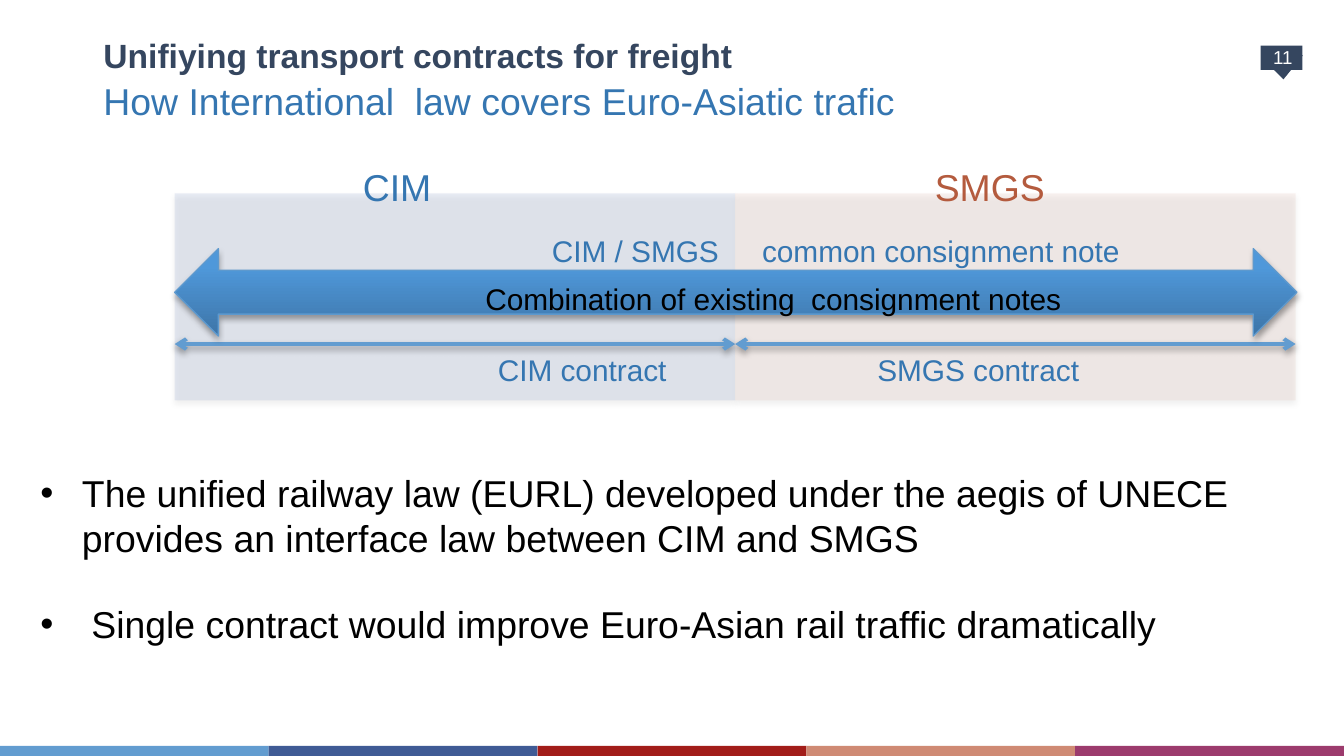
"""Builds the slide on unifying rail freight contracts between CIM and SMGS."""
from lxml import etree
from pptx import Presentation
from pptx import util as u
from pptx.dml.color import RGBColor
from pptx.enum import shapes, text
from pptx.oxml import parse_xml
from pptx.oxml.ns import nsdecls, qn

PX = 9144
NAVY = RGBColor(0x35, 0x46, 0x5F)
BLUE = RGBColor(0x35, 0x76, 0xB1)
SKY = RGBColor(0x62, 0x9C, 0xD0)
INDIGO = RGBColor(0x3F, 0x5B, 0x95)
RED = RGBColor(0xA2, 0x1D, 0x19)
CLAY = RGBColor(0xCF, 0x8A, 0x74)
PLUM = RGBColor(0x9C, 0x3B, 0x6D)
RUST = RGBColor(0xB4, 0x5B, 0x3E)
CIM_TINT = RGBColor(0x81, 0x99, 0xCA)
SMGS_TINT = RGBColor(0xE2, 0xB9, 0xAC)
ARROW_DARK = RGBColor(0x3D, 0x75, 0xA8)
ARROW_LIGHT = RGBColor(0x4F, 0x98, 0xDA)
ARROW_EDGE = RGBColor(0x5D, 0x99, 0xCE)
WHITE = RGBColor(0xFF, 0xFF, 0xFF)
BLACK = RGBColor(0, 0, 0)

LEFT, CENTER, RIGHT = text.PP_ALIGN.LEFT, text.PP_ALIGN.CENTER, text.PP_ALIGN.RIGHT
SHAPE = shapes.MSO_SHAPE

prs = Presentation()
prs.slide_width = 1000 * PX
prs.slide_height = prs.slide_width * 9 // 16
s = prs.slides.add_slide(prs.slide_layouts[3])


def add_box(kind, x, y, w, h, color):
    sp = s.shapes.add_shape(kind, x * PX, y * PX, w * PX, h * PX)
    sp.shadow.inherit = False
    sp.fill.solid()
    sp.fill.fore_color.rgb = color
    sp.line.fill.background()
    return sp


def write(p, words, size, color, align=LEFT, bold=False):
    p.alignment = align
    p.space_before = u.Pt(0)
    r = p.add_run()
    r.text = words
    r.font.name, r.font.size, r.font.bold = "Arial", u.Pt(size), bold
    r.font.color.rgb = color


add_box(SHAPE.RECTANGLE, 938, 34, 31, 18, NAVY)
add_box(SHAPE.ISOSCELES_TRIANGLE, 939, 42, 31, 17, NAVY).rotation = 176.8
for i, color in enumerate([SKY, INDIGO, RED, CLAY, PLUM]):
    add_box(SHAPE.RECTANGLE, i * 200, 555, 200, 8, color)

title, subtitle, points = s.placeholders
for sp, (x, y, w, h) in [
    (title, (67, 29, 866, 24)),
    (subtitle, (67, 53, 866, 32)),
    (points, (20, 345, 980, 141)),
]:
    sp.left, sp.top, sp.width, sp.height = x * PX, y * PX, w * PX, h * PX
    sp.text_frame.auto_size = text.MSO_AUTO_SIZE.NONE

title.text_frame.vertical_anchor = text.MSO_ANCHOR.MIDDLE
write(title.text_frame.paragraphs[0], "Unifiying transport contracts for freight", 18, NAVY, bold=True)

p = subtitle.text_frame.paragraphs[0]
write(p, "How International  law covers Euro-Asiatic trafic", 20, BLUE)
pPr = p._p.get_or_add_pPr()
pPr.set("marL", "0")
pPr.set("indent", "0")
etree.SubElement(pPr, qn("a:buNone"))

tf = points.text_frame
tf.add_paragraph()
for p, indent, words in zip(tf.paragraphs, [31, 38], [
    "The unified railway law (EURL) developed under the aegis of UNECE "
    "provides an interface law between CIM and SMGS",
    "Single contract would improve Euro-Asian rail traffic dramatically",
]):
    write(p, words, 20, BLACK)
    pPr = p._p.get_or_add_pPr()
    pPr.set("marL", str(indent * PX))
    pPr.set("indent", str(-indent * PX))
tf.paragraphs[1].space_before = u.Pt(22)

shadowed = []
for x, color in [(130, CIM_TINT), (547, SMGS_TINT)]:
    zone = add_box(SHAPE.RECTANGLE, x, 144, 417, 154, color)
    rgb = zone._element.spPr.find(".//" + qn("a:srgbClr"))
    etree.SubElement(rgb, qn("a:alpha"), val="17000")
    shadowed.append(zone)

for x in (130, 547):
    span = s.shapes.add_connector(
        shapes.MSO_CONNECTOR.STRAIGHT, x * PX, 256 * PX, (x + 417) * PX, 256 * PX)
    span.line.color.rgb = SKY
    span.line.width = u.Pt(2)
    ln = span.line._get_or_add_ln()
    for end in ("a:headEnd", "a:tailEnd"):
        etree.SubElement(ln, qn(end), type="arrow")
    shadowed.append(span)

arrow = add_box(SHAPE.LEFT_RIGHT_ARROW, 130, 185, 835, 65, ARROW_LIGHT)
arrow.fill.gradient()
arrow.fill.gradient_angle = 90
for stop, color in zip(arrow.fill.gradient_stops, [ARROW_DARK, ARROW_LIGHT]):
    stop.color.rgb = color
arrow.fill.gradient_stops[1].position = 0.8
arrow.line.color.rgb = ARROW_EDGE
arrow.line.width = u.Pt(0.75)
shadowed.append(arrow)

for sp in shadowed:
    spPr = sp._element.spPr
    for old in spPr.findall(qn("a:effectLst")):
        spPr.remove(old)
    spPr.append(parse_xml(
        f'<a:effectLst {nsdecls("a")}>'
        '<a:outerShdw blurRad="40000" dist="22860" dir="5400000" rotWithShape="0">'
        '<a:srgbClr val="000000"><a:alpha val="35000"/></a:srgbClr>'
        '</a:outerShdw></a:effectLst>'))

for x, y, w, h, words, size, color, align in [
    (201, 116, 189, 32, "CIM", 20, BLUE, CENTER),
    (642, 116, 189, 32, "SMGS", 20, RUST, CENTER),
    (358, 167, 189, 32, "CIM / SMGS", 16, BLUE, RIGHT),
    (555, 167, 299, 32, "common consignment note", 16, BLUE, LEFT),
    (319, 256, 189, 31, "CIM contract", 16, BLUE, RIGHT),
    (626, 256, 189, 31, "SMGS contract", 16, BLUE, RIGHT),
    (280, 203, 591, 31, "Combination of existing  consignment notes", 16, BLACK, CENTER),
    (940, 34, 29, 18, "11", 10, WHITE, CENTER),
]:
    tf = s.shapes.add_textbox(x * PX, y * PX, w * PX, h * PX).text_frame
    tf.word_wrap = True
    side, top = (0, 0) if words == "11" else (12 * PX, 6 * PX)
    tf.margin_left = tf.margin_right = side
    tf.margin_top = tf.margin_bottom = top
    write(tf.paragraphs[0], words, size, color, align)

prs.save("out.pptx")
